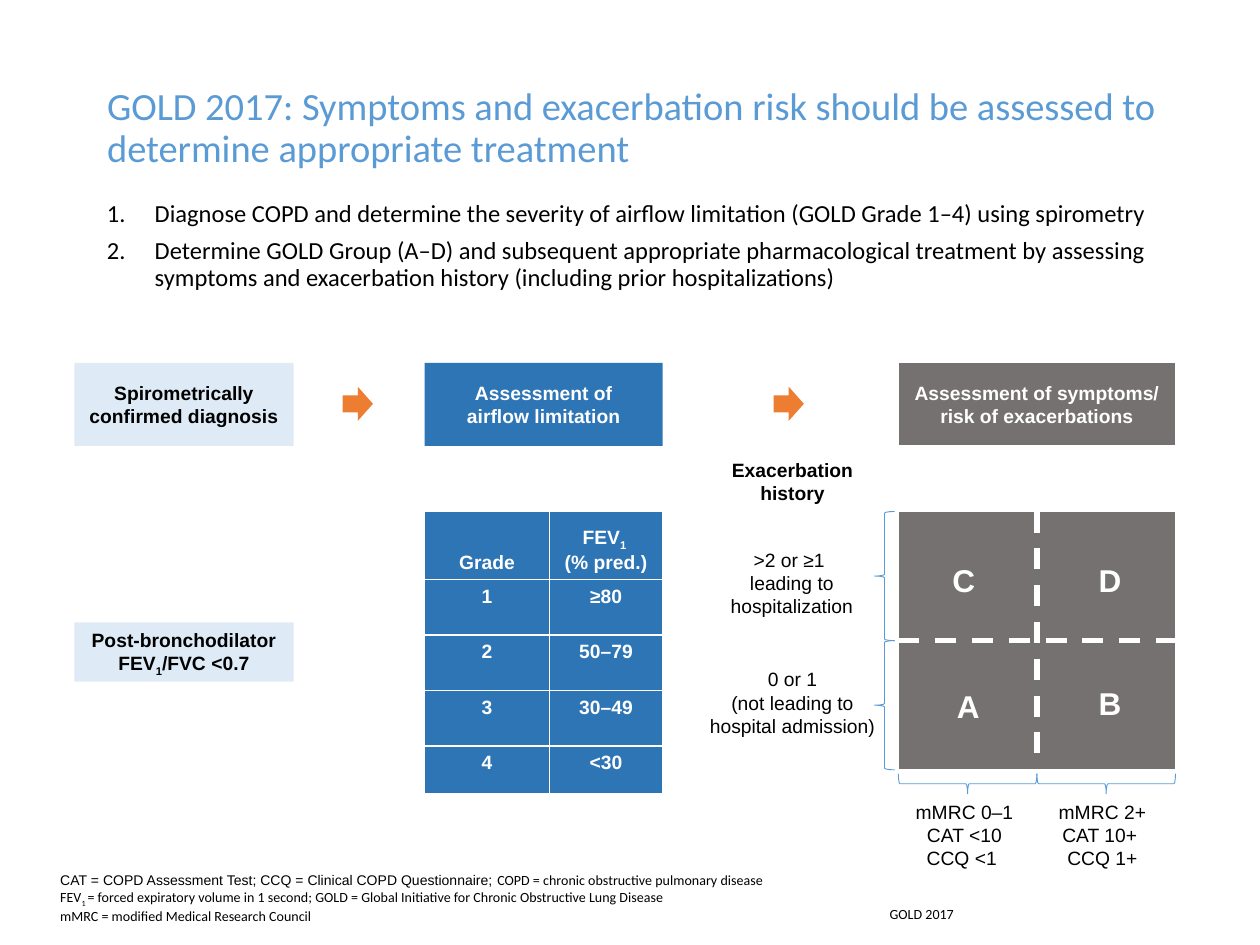
from lxml import etree
from pptx import Presentation, util as u
from pptx.dml.color import RGBColor
from pptx.enum import dml, shapes, text
from pptx.oxml.ns import qn

COLORS = {
    "title": "5B9BD5", "black": "000000", "white": "FFFFFF", "pale": "DEEBF7",
    "blue": "2E75B6", "gray": "767171", "orange": "ED7D31",
}
UNIT = u.Inches(0.1)
COLUMNS, ROWS = 100, 75
CENTER, LEFT, RIGHT = text.PP_ALIGN.CENTER, text.PP_ALIGN.LEFT, text.PP_ALIGN.RIGHT
TOP, MIDDLE, BOTTOM = text.MSO_ANCHOR.TOP, text.MSO_ANCHOR.MIDDLE, text.MSO_ANCHOR.BOTTOM
SHAPE = shapes.MSO_SHAPE

HEADER_ROW, HEADER_HEIGHT = 28.8, 6.6
DIAGNOSIS = (5.9, 17.4)
AIRFLOW = (33.7, 18.9)
MATRIX = (71.3, 22)
MATRIX_ROW, MATRIX_HEIGHT = 40.6, 20.5


def rgb(name):
    return RGBColor.from_string(COLORS[name])


def grid(*cells):
    return [u.Emu(round(cell * UNIT)) for cell in cells]


def write_paragraph(paragraph, words, size=11, color="black", bold=False,
                    align=CENTER, font="Arial"):
    for index, part in enumerate(words.split("~")):
        for line_index, line in enumerate(part.split("\n")):
            if line_index:
                paragraph.add_line_break()
            if line:
                run = paragraph.add_run()
                run.text = line
                if index % 2:
                    run._r.get_or_add_rPr().set("baseline", "-25000")
    paragraph.alignment = align
    paragraph.font.size = u.Pt(size)
    paragraph.font.name = font
    paragraph.font.bold = bold
    paragraph.font.color.rgb = rgb(color)


def write(frame, paragraphs, anchor=TOP, wrap=True, **style):
    frame.word_wrap = wrap
    frame.vertical_anchor = anchor
    for index, words in enumerate(paragraphs):
        paragraph = frame.add_paragraph() if index else frame.paragraphs[0]
        write_paragraph(paragraph, words, **style)


def add_label(slide, place, *paragraphs, **style):
    label = slide.shapes.add_textbox(*grid(*place))
    write(label.text_frame, paragraphs, **style)
    return label.text_frame


def add_block(slide, place, fill, *paragraphs, kind=SHAPE.RECTANGLE, line=None, **style):
    block = slide.shapes.add_shape(kind, *grid(*place))
    block.shadow.inherit = False
    block.fill.solid()
    block.fill.fore_color.rgb = rgb(fill)
    if line:
        block.line.color.rgb = rgb("white")
        block.line.width = u.Pt(line)
    else:
        block.line.fill.background()
    write(block.text_frame, paragraphs, **style)


def add_brace(slide, place, rotation=0):
    brace = slide.shapes.add_shape(SHAPE.LEFT_BRACE, *grid(*place))
    brace.shadow.inherit = False
    brace.rotation = rotation
    brace.fill.background()
    brace.line.color.rgb = rgb("title")
    brace.line.width = u.Pt(0.5)


def add_divider(slide, *ends):
    divider = slide.shapes.add_connector(shapes.MSO_CONNECTOR.STRAIGHT, *grid(*ends))
    divider.line.color.rgb = rgb("white")
    divider.line.width = u.Pt(3)
    divider.line.dash_style = dml.MSO_LINE.DASH
    etree.SubElement(divider._element.spPr, qn("a:effectLst"))


def add_title(slide, words):
    title = slide.shapes.title
    title.left, title.top, title.width, title.height = grid(7.5, 5, 89.2, 10.5)
    write(title.text_frame, [words], MIDDLE, size=22, color="title", align=LEFT, font="Calibri")
    title.text_frame.auto_size = text.MSO_AUTO_SIZE.NONE
    title.text_frame.paragraphs[0].line_spacing = 0.9


def add_steps(slide):
    steps = add_label(
        slide, (7.5, 15.5, 85, 49.5),
        "Diagnose COPD and determine the severity of airflow limitation (GOLD Grade 1–4) using spirometry",
        "Determine GOLD Group (A–D) and subsequent appropriate pharmacological treatment by assessing "
        "symptoms and exacerbation history (including prior hospitalizations)",
        size=14, align=LEFT, font="Calibri")
    for index, step in enumerate(steps.paragraphs):
        step.line_spacing = 0.9
        step.space_before = step.space_after = u.Pt(6 * index)
        properties = step._p.get_or_add_pPr()
        indent = u.Inches(0.38)
        properties.set("marL", str(indent))
        properties.set("indent", str(-indent))
        number = etree.Element(qn("a:buAutoNum"), type="arabicPeriod")
        properties.find(qn("a:defRPr")).addprevious(number)


def border_cell(cell):
    properties = cell._tc.get_or_add_tcPr()
    for index, side in enumerate(("lnL", "lnR", "lnT", "lnB")):
        edge = etree.Element(qn(f"a:{side}"), w=str(u.Pt(1)))
        fill = etree.SubElement(edge, qn("a:solidFill"))
        etree.SubElement(fill, qn("a:srgbClr"), val=COLORS["white"])
        properties.insert(index, edge)


def add_grades(slide):
    grades = [("Grade", "FEV~1 ~\n(% pred.)"), ("1", "≥80"), ("2", "50–79"),
              ("3", "30–49"), ("4", "<30")]
    left, width = AIRFLOW
    table = slide.shapes.add_table(
        len(grades), 2, *grid(left, MATRIX_ROW, width, 22.3)).table
    for column, size in zip(table.columns, grid(9.9, 9)):
        column.width = size
    for row, size in zip(table.rows, grid(5.4, 4.4, 4.4, 4.4, 3.8)):
        row.height = size
    for row_index, values in enumerate(grades):
        for column_index, words in enumerate(values):
            cell = table.cell(row_index, column_index)
            cell.fill.solid()
            cell.fill.fore_color.rgb = rgb("blue")
            cell.vertical_anchor = TOP if row_index else BOTTOM
            write_paragraph(cell.text_frame.paragraphs[0], words, color="white", bold=True)
            border_cell(cell)


def add_matrix(slide):
    left, width = MATRIX
    half_width, half_height = width / 2, MATRIX_HEIGHT / 2
    middle_column, middle_row = left + half_width, MATRIX_ROW + half_height
    add_block(slide, (left, MATRIX_ROW, width, MATRIX_HEIGHT), "gray", line=1)
    add_divider(slide, middle_column, MATRIX_ROW, middle_column, MATRIX_ROW + MATRIX_HEIGHT)
    add_divider(slide, left, middle_row, left + width, middle_row)
    for group, column, row, size in (("C", 74.6, 44, 3.8), ("D", 86.2, 44, 3.8),
                                     (" A", 74.3, 54, 4.5), ("B", 86.2, 53.8, 3.8)):
        add_block(slide, (column, row, size, 4), "gray", group,
                  wrap=False, size=18, color="white", bold=True)
    for index in range(2):
        add_brace(slide, (69.4, MATRIX_ROW + index * half_height, 1.6, half_height))
        add_brace(slide, (76 + index * half_width, 56.7, 1.6, half_width), 270)
    add_label(slide, (69.7, 63, 13.7, 6.6), "mMRC 0–1", "CAT <10", "CCQ <1 ")
    add_label(slide, (80.7, 63, 13.6, 6.6), "mMRC 2+", "CAT 10+ ", "CCQ 1+")
    add_label(slide, (55.2, 35.9, 15.4, 4.7), "Exacerbation history", bold=True)
    add_label(slide, (56, 43, 13.7, 6.6), ">2 or ≥1 \nleading to hospitalization")
    add_label(slide, (55.2, 52.5, 15.4, 6.6), "0 or 1\n(not leading to hospital admission)")


def add_flow(slide):
    stages = (
        (DIAGNOSIS, "pale", "black", "Spirometrically confirmed diagnosis"),
        (AIRFLOW, "blue", "white", "Assessment of\nairflow limitation"),
        (MATRIX, "gray", "white", "Assessment of symptoms/ risk of exacerbations"),
    )
    for (left, width), fill, color, words in stages:
        add_block(slide, (left, HEADER_ROW, width, HEADER_HEIGHT), fill, words,
                  anchor=MIDDLE, color=color, bold=True,
                  line=0.75 if fill == "gray" else None)
    for column in (27.2, 61.4):
        add_block(slide, (column, 30.7, 2.4, 2.7), "orange", kind=SHAPE.RIGHT_ARROW)
    left, width = DIAGNOSIS
    add_block(slide, (left, 49.4, width, 4.7), "pale",
              "Post-bronchodilator FEV~1~/FVC <0.7", bold=True)


def add_footer(slide):
    abbreviations = add_label(
        slide, (3.8, 68.7, 63.7, 5),
        "CAT = COPD Assessment Test; CCQ = Clinical COPD Questionnaire; ~~"
        "COPD = chronic obstructive pulmonary disease \nFEV~1 ~= forced expiratory volume in 1 second; "
        "GOLD = Global Initiative for Chronic Obstructive Lung Disease\n"
        "mMRC = modified Medical Research Council",
        size=8, align=LEFT, font="Calibri")
    abbreviations.paragraphs[0].runs[0].font.name = "Arial"
    add_label(slide, (66.5, 71.4, 10.2, 2.4), "GOLD 2017", size=8, align=RIGHT, font="Calibri")


def main():
    deck = Presentation()
    deck.slide_width, deck.slide_height = grid(COLUMNS, ROWS)
    slide = deck.slides.add_slide(deck.slide_layouts[5])
    add_title(slide, "GOLD 2017: Symptoms and exacerbation risk should be assessed "
                     "to determine appropriate treatment")
    add_steps(slide)
    add_flow(slide)
    add_grades(slide)
    add_matrix(slide)
    add_footer(slide)
    deck.save("out.pptx")


if __name__ == "__main__":
    main()
